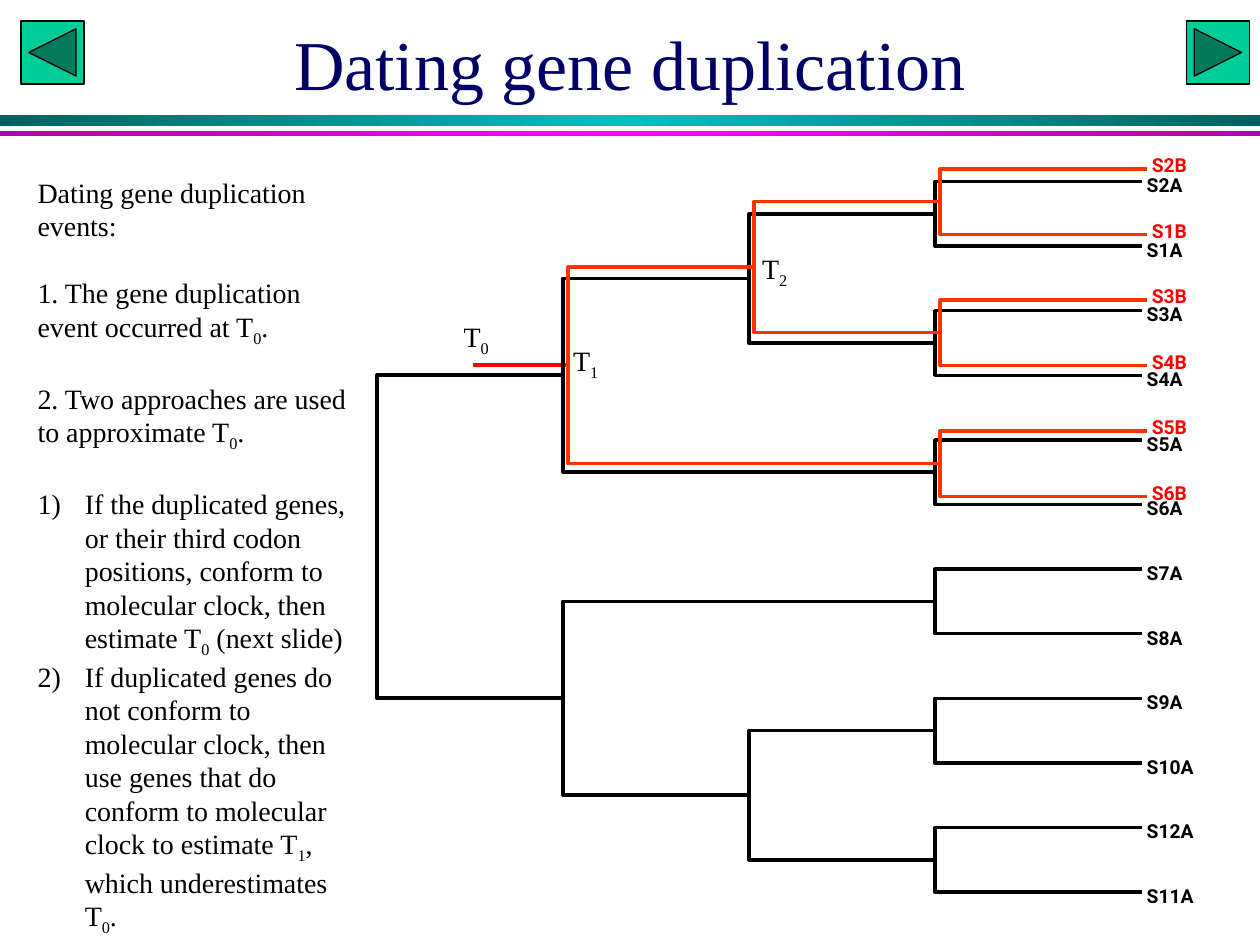
from copy import deepcopy

from lxml import etree
from pptx import Presentation
from pptx.dml.color import RGBColor
from pptx.enum import shapes as es, text as et
from pptx.oxml import ns
from pptx.util import Pt

SERIF, SANS = "Times New Roman", "Roboto"
TIP = 118  # length of the last branches
LINE = 19.2  # one line of body text

DUPLICATED = ((("S2", "S1"), ("S3", "S4")), ("S5", "S6"))
SPECIES = (DUPLICATED, (("S7", "S8"), (("S9", "S10"), ("S12", "S11"))))

INTRO = [
    "Dating gene duplication events:",
    "1. The gene duplication event occurred at T_0.",
    "2. Two approaches are used to approximate T_0.",
]
APPROACHES = [
    "If the duplicated genes, or their third codon positions, conform to "
    "molecular clock, then estimate T_0 (next slide)",
    "If duplicated genes do not conform to molecular clock, then use genes that "
    "do conform to molecular clock to estimate T_1, which underestimates T_0.",
]


def rgb(value):
    return RGBColor.from_string(value)


def points(box):
    return [Pt(length) for length in box]


def add_runs(paragraph, wording, size, font, color, bold):
    """Add wording; the character after each underscore is a subscript."""
    first, *rest = wording.split("_")
    pieces = [(first, False)]
    for part in rest:
        pieces += [(part[0], True), (part[1:], False)]
    for piece, subscript in pieces:
        if not piece:
            continue
        run = paragraph.add_run()
        run.text = piece
        run.font.size, run.font.name, run.font.bold = Pt(size), font, bold
        run.font.color.rgb = rgb(color)
        if subscript:
            run.font._element.set("baseline", "-25000")


def add_text(slide, box, *paragraphs, size=16, font=SERIF, color="000000", bold=False,
             align=et.PP_ALIGN.LEFT, anchor=et.MSO_ANCHOR.TOP, wrap=True,
             inset=(7.2, 3.6), gap=0):
    frame = slide.shapes.add_textbox(*points(box)).text_frame
    frame.word_wrap, frame.vertical_anchor = wrap, anchor
    frame.margin_left = frame.margin_right = Pt(inset[0])
    frame.margin_top = frame.margin_bottom = Pt(inset[1])
    for i, wording in enumerate(paragraphs):
        paragraph = frame.add_paragraph() if i else frame.paragraphs[0]
        paragraph.alignment = align
        paragraph.space_before = Pt(gap if i else 0)
        add_runs(paragraph, wording, size, font, color, bold)
    return frame


def number(paragraph):
    props = paragraph._p.get_or_add_pPr()
    props.set("marL", str(Pt(27)))
    props.set("indent", str(Pt(-27)))
    etree.SubElement(props, ns.qn("a:buAutoNum"), type="arabicParenR")


def add_rule(slide, box, edge, middle):
    """Draw a bar that fades from edge to middle and back to edge."""
    rule = slide.shapes.add_shape(es.MSO_SHAPE.RECTANGLE, *points(box))
    rule.shadow.inherit = False
    rule.line.fill.background()
    rule.fill.gradient()
    rule.fill.gradient_angle = 0
    stops = rule.fill._xPr.find(ns.qn("a:gradFill")).find(ns.qn("a:gsLst"))
    stops.append(deepcopy(stops[0]))
    for stop, position, color in zip(rule.fill.gradient_stops, (0, 0.5, 1),
                                     (edge, middle, edge)):
        stop.position = position
        stop.color.rgb = rgb(color)


def add_button(slide, kind, box):
    button = slide.shapes.add_shape(kind, *points(box))
    button.shadow.inherit = False
    button.fill.solid()
    button.fill.fore_color.rgb = rgb("00CC99")
    button.line.color.rgb = rgb("000000")
    button.line.width = Pt(0.75)


def add_header(slide, box):
    left, top, width, height = box
    add_rule(slide, (left, top + 66, width, 6), "006060", "00C0C0")
    add_rule(slide, (left, top + 75, width, 3), "B000B0", "FF00FF")
    add_button(slide, es.MSO_SHAPE.ACTION_BUTTON_BACK_OR_PREVIOUS,
               (left + 12, top + 12, 36, 36))
    add_button(slide, es.MSO_SHAPE.ACTION_BUTTON_FORWARD_OR_NEXT,
               (left + width - 42, top + 12, 36, 36))
    add_text(slide, (left + 54, top, width - 108, height), "Dating gene duplication",
             size=40, color="000066", align=et.PP_ALIGN.CENTER,
             anchor=et.MSO_ANCHOR.MIDDLE)


def rank(node):
    """Count the splits between a node and its farthest tip."""
    return 0 if isinstance(node, str) else 1 + max(map(rank, node))


def tips(node):
    return [node] if isinstance(node, str) else [t for child in node for t in tips(child)]


def add_branch(slide, corners, color):
    start, *rest = [points(corner) for corner in corners]
    builder = slide.shapes.build_freeform(*start, scale=1.0)
    builder.add_line_segments(rest, close=False)
    branch = builder.convert_to_shape()
    branch.shadow.inherit = False
    branch.fill.background()
    branch.line.color.rgb = rgb(color)
    branch.line.width = Pt(2)


def add_tree(slide, box, tree, copy_name, line_color, label_color, label_rise):
    """Draw a tree with evenly spaced tips; each split lies midway between its children."""
    left, top, width, height = box
    right = left + width
    level = (width - TIP) / (rank(tree) - 1)
    leaves = tips(tree)
    rows = {leaf: top + i * height / (len(leaves) - 1) for i, leaf in enumerate(leaves)}

    def place(node):
        if isinstance(node, str):
            return right, rows[node]
        x = right - TIP - (rank(node) - 1) * level
        return x, sum(place(child)[1] for child in node) / 2

    def grow(node):
        if isinstance(node, str):
            return
        x, y = place(node)
        for child in node:
            child_x, child_y = place(child)
            add_branch(slide, [(x, y), (x, child_y), (child_x, child_y)], line_color)
            grow(child)

    grow(tree)
    for leaf, y in rows.items():
        add_text(slide, (right + 3, y - label_rise, 28, 14), leaf + copy_name, size=11,
                 font=SANS, color=label_color, bold=True, wrap=False, inset=(0, 0))


def add_duplication_line(slide, start, end):
    line = slide.shapes.add_connector(es.MSO_CONNECTOR.STRAIGHT,
                                      *points(start), *points(end))
    line.line.color.rgb = rgb("FF0000")
    line.line.width = Pt(2.25)
    etree.SubElement(line._element.spPr, ns.qn("a:effectLst"))


def add_explanation(slide, box):
    frame = add_text(slide, box, *INTRO, *APPROACHES, gap=LINE)
    approaches = frame.paragraphs[len(INTRO):]
    for paragraph in approaches:
        number(paragraph)
    approaches[-1].space_before = Pt(0)


def main():
    deck = Presentation()
    deck.slide_width, deck.slide_height = Pt(720), Pt(540)
    slide = deck.slides.add_slide(deck.slide_layouts[6])

    add_header(slide, (0, 0, 720, 72))
    add_duplication_line(slide, (324.7, 208.8), (270, 208.8))
    add_tree(slide, (215.3, 103.7, 437, 406.1), SPECIES, "A", "000000", "000000", 4.5)
    add_tree(slide, (324.7, 96.5, 330.5, 187.2), DUPLICATED, "B", "FF3300", "FF0000", 8.8)
    add_explanation(slide, (14.4, 96.5, 201.6, 434))
    for time, left, top in (("T_0", 257.8, 179.3), ("T_1", 320.4, 193), ("T_2", 428.4, 140.4)):
        add_text(slide, (left, top, 34, 26.6), time)

    deck.save("out.pptx")


if __name__ == "__main__":
    main()
